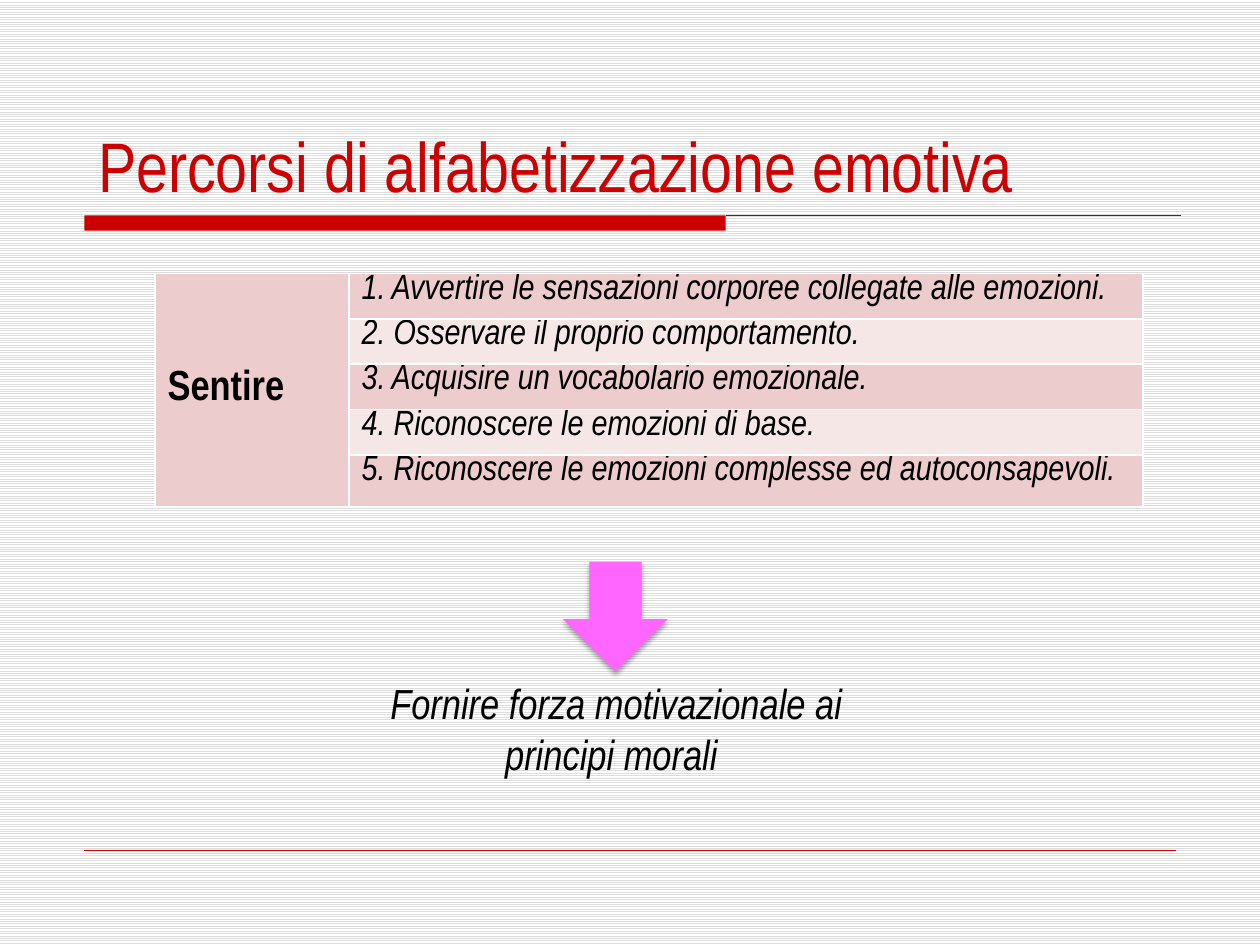
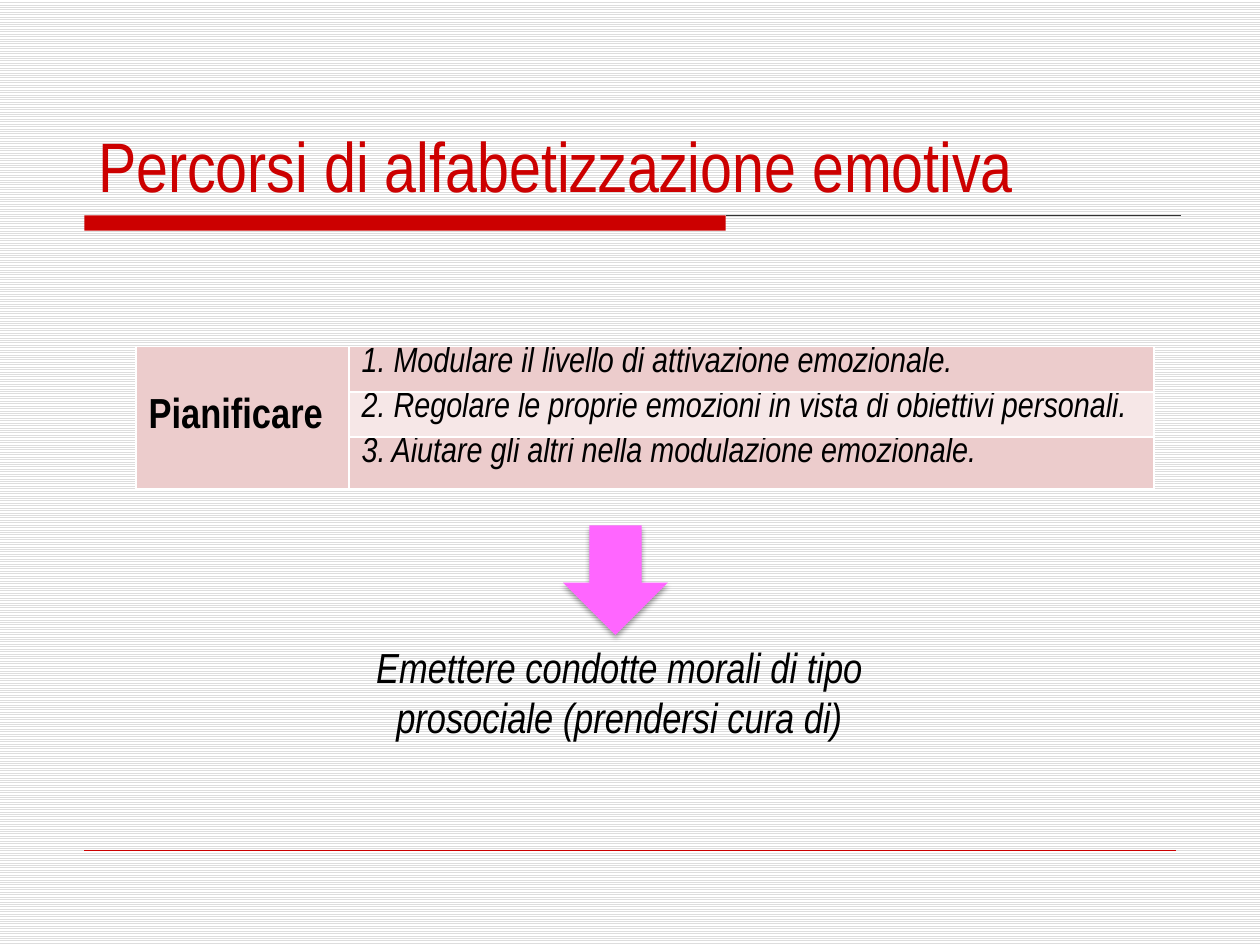
from lxml import etree
from pptx import Presentation
from pptx import util as u
from pptx.dml.color import RGBColor
from pptx.enum import dml, shapes, text
from pptx.oxml import parse_xml
from pptx.oxml.ns import nsdecls, qn

PX = 9144  # 100 px to the inch
RED = RGBColor(0xCC, 0x00, 0x00)
DARK = RGBColor(0x33, 0x33, 0x33)
BLACK = RGBColor(0x00, 0x00, 0x00)
WHITE = RGBColor(0xFF, 0xFF, 0xFF)
GREY = RGBColor(0xDD, 0xDD, 0xDD)
PINK = RGBColor(0xFF, 0x66, 0xFF)
ROSE = RGBColor(0xEC, 0xCC, 0xCC)
PALE = RGBColor(0xF6, 0xE7, 0xE7)

HEAD = {"size": u.Pt(40)}
LABEL = {"size": u.Pt(24), "bold": True}
STEP = {"size": u.Pt(20), "bold": False, "italic": True}
GOAL = {"size": u.Pt(24), "italic": True}

TITLE = "Percorsi di alfabetizzazione emotiva"
ROW, LAST = 36, 41  # row heights

# Rules: x1, x2, y, colour, width in points
RULES = [(576, 937, 171, DARK, 0.75), (67, 933, 675, RED, 0.25)]

SLIDES = [
    {
        "label": "Sentire",
        "steps": [
            "1. Avvertire le sensazioni corporee collegate alle emozioni.",
            "2. Osservare il proprio comportamento.",
            "3. Acquisire un vocabolario emozionale.",
            "4. Riconoscere le emozioni di base.",
            "5. Riconoscere le emozioni complesse ed autoconsapevoli.",
        ],
        "grid": (123, 217),
        "cols": (154, 630),
        "arrow": 446,
        "goal": "Fornire forza motivazionale ai principi morali ",
        "box": (290, 533, 398, 91),
    },
    {
        "label": "Pianificare",
        "steps": [
            "1. Modulare il livello di attivazione emozionale.",
            "2. Regolare le proprie emozioni in vista di obiettivi personali.",
            "3. Aiutare gli altri nella modulazione emozionale.",
        ],
        "grid": (108, 275),
        "cols": (169, 639),
        "arrow": 417,
        "goal": "Emettere condotte morali di tipo prosociale (prendersi cura di)",
        "box": (283, 504, 417, 91),
    },
]

BORDER = (
    '<a:{} {} w="12700"><a:solidFill><a:srgbClr val="{}"/></a:solidFill></a:{}>'
)
SHADE = (
    '<a:effectLst {}><a:outerShdw blurRad="39370" dist="22860" dir="5400000" '
    'rotWithShape="0"><a:srgbClr val="000000"><a:alpha val="35000"/></a:srgbClr>'
    "</a:outerShdw></a:effectLst>"
)


def px(*nums):
    return [u.Emu(n * PX) for n in nums]


def write(frame, words, style, color=BLACK):
    frame.word_wrap = True
    run = frame.paragraphs[0].add_run()
    run.text = words
    run.font.name = "Arial Narrow"
    run.font.color.rgb = color
    for key, val in style.items():
        setattr(run.font, key, val)


prs = Presentation()
prs.slide_width, prs.slide_height = px(1000, 750)

for data in SLIDES:
    slide = prs.slides.add_slide(prs.slide_layouts[6])
    parts = slide.shapes

    # Striped background
    fill = slide.background.fill
    fill.patterned()
    fill.pattern = dml.MSO_PATTERN.LIGHT_HORIZONTAL
    fill.fore_color.rgb = GREY
    fill.back_color.rgb = WHITE

    # Red band and thin rules
    band = parts.add_shape(shapes.MSO_SHAPE.RECTANGLE, *px(67, 171, 509, 12))
    band.shadow.inherit = False
    band.fill.solid()
    band.fill.fore_color.rgb = RED
    band.line.fill.background()
    for x1, x2, y, color, width in RULES:
        rule = parts.add_connector(
            shapes.MSO_CONNECTOR.STRAIGHT, *px(x1, y, x2, y)
        )
        rule.line.color.rgb = color
        rule.line.width = u.Pt(width)
        etree.SubElement(rule._element.spPr, qn("a:effectLst"))

    # Table: one merged label beside the steps
    steps = data["steps"]
    high = [ROW] * (len(steps) - 1) + [LAST]
    size = (sum(data["cols"]), sum(high))
    table = parts.add_table(len(steps), 2, *px(*data["grid"], *size)).table
    table.first_row = table.horz_banding = False
    for col, wide in zip(table.columns, px(*data["cols"])):
        col.width = wide
    for row, tall in zip(table.rows, px(*high)):
        row.height = tall
    for i, step in enumerate(steps):
        for j in range(2):
            cell = table.cell(i, j)
            cell.margin_top = cell.margin_bottom = 0
            props = cell._tc.get_or_add_tcPr()
            for side in ("lnL", "lnR", "lnT", "lnB"):
                props.append(
                    parse_xml(BORDER.format(side, nsdecls("a"), WHITE, side))
                )
            cell.fill.solid()
            cell.fill.fore_color.rgb = PALE if j and i % 2 else ROSE
        write(table.cell(i, 1).text_frame, step, STEP)
    label = table.cell(0, 0)
    label.merge(table.cell(len(steps) - 1, 0))
    label.vertical_anchor = text.MSO_ANCHOR.MIDDLE
    write(label.text_frame, data["label"], LABEL)

    # Title
    title = parts.add_textbox(*px(68, 92, 842, 77))
    write(title.text_frame, TITLE, HEAD, RED)

    # Arrow down to the goal
    arrow = parts.add_shape(
        shapes.MSO_SHAPE.DOWN_ARROW, *px(447, data["arrow"], 83, 87)
    )
    arrow.fill.solid()
    arrow.fill.fore_color.rgb = PINK
    arrow.line.fill.background()
    arrow._element.spPr.append(parse_xml(SHADE.format(nsdecls("a"))))

    # Goal
    goal = parts.add_textbox(*px(*data["box"]))
    write(goal.text_frame, data["goal"], GOAL)
    goal.text_frame.paragraphs[0].alignment = text.PP_ALIGN.CENTER

prs.save("out.pptx")
